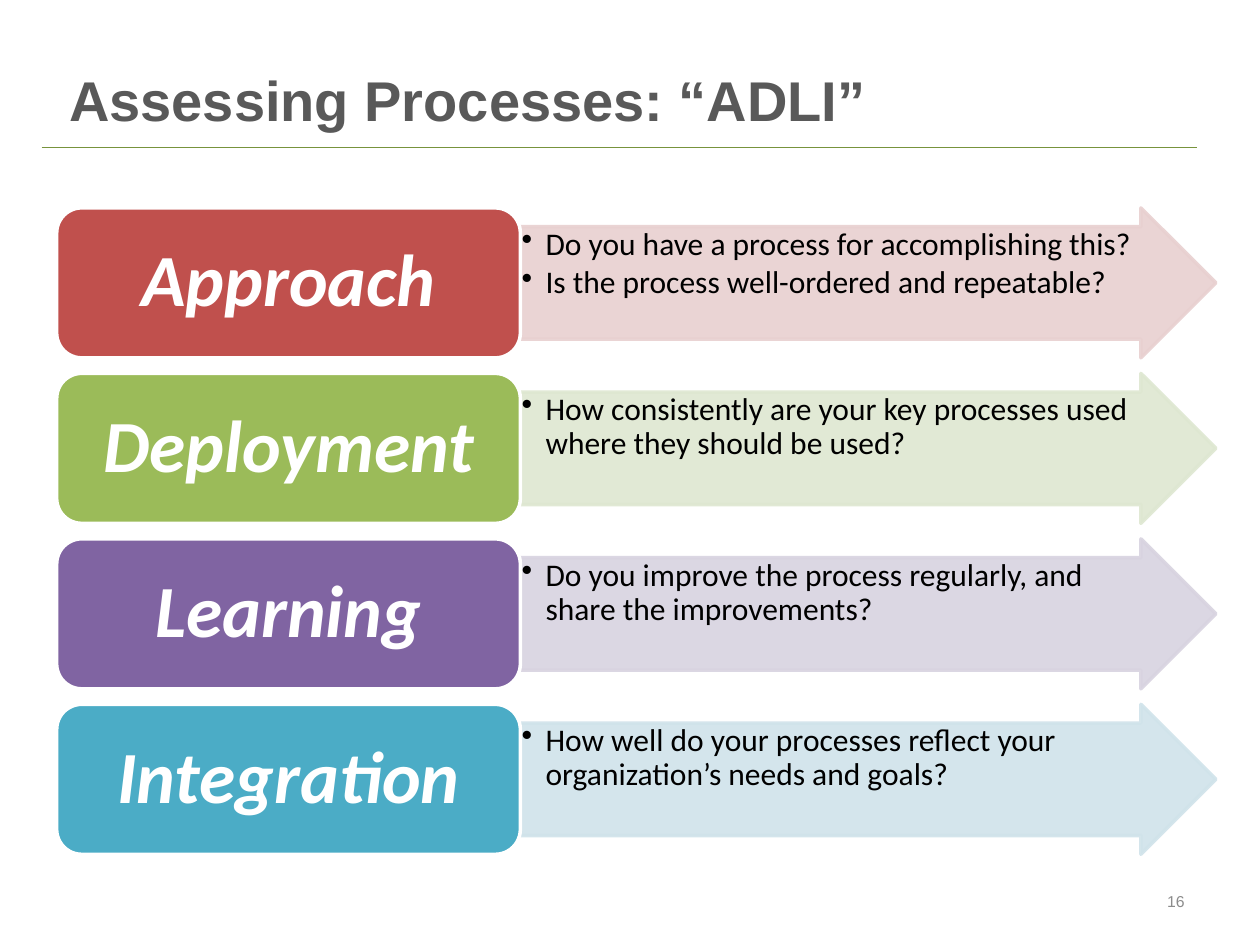
import collections

import pptx
import pptx.dml.color
import pptx.enum.shapes
import pptx.enum.text
import pptx.oxml
import pptx.oxml.ns
import pptx.util

SHAPE = pptx.enum.shapes.MSO_SHAPE
ALIGN = pptx.enum.text.PP_ALIGN
ANCHOR = pptx.enum.text.MSO_ANCHOR
Pt = pptx.util.Pt
Box = collections.namedtuple("Box", "left top width height")

COLUMNS, ROWS = 100, 75
DECK_WIDTH, DECK_HEIGHT = pptx.util.Inches(10), pptx.util.Inches(7.5)
WHITE = "FFFFFF"
LABEL_SHARE = 0.4
ROW_HEIGHT = 11.9

TITLE_FONT = {"name": "Arial", "size": Pt(32), "bold": True}
NUMBER_FONT = {"name": "Arial", "size": Pt(9)}
LABEL_FONT = {"name": "Calibri", "size": Pt(42), "bold": True, "italic": True}
BULLET_FONT = {"name": "Calibri", "size": Pt(18)}

STEPS = [
    ("Approach", "C0504D", "E8D0D0",
     ["Do you have a process for accomplishing this?",
      "Is the process well-ordered and repeatable?"]),
    ("Deployment", "9BBB59", "DEE7D1",
     ["How consistently are your key processes used where they should be used?"]),
    ("Learning", "8064A2", "D8D3E0",
     ["Do you improve the process regularly, and share the improvements?"]),
    ("Integration", "4BACC6", "D0E3EA",
     ["How well do your processes reflect your organization’s needs and goals?"]),
]


def rgb(value):
    """Return the colour for a hex string."""
    return pptx.dml.color.RGBColor.from_string(value)


def assign(target, values):
    """Set each attribute in values on the target."""
    for name, value in values.items():
        setattr(target, name, value)


def place(box):
    """Turn a box in grid units into slide lengths."""
    across, down = DECK_WIDTH / COLUMNS, DECK_HEIGHT / ROWS
    return [round(length * unit) for length, unit in zip(box, (across, down) * 2)]


def write(frame, lines, font, color, layout, paragraph, bullet=False):
    """Fill a text frame with one paragraph for each line."""
    assign(frame, {"word_wrap": True, **layout})
    for index, line in enumerate(lines):
        para = frame.add_paragraph() if index else frame.paragraphs[0]
        assign(para, paragraph)
        if bullet:
            properties = para._p.get_or_add_pPr()
            indent = pptx.util.Inches(0.19)
            properties.set("marL", str(indent))
            properties.set("indent", str(-indent))
            mark = pptx.oxml.parse_xml(
                f'<a:buChar {pptx.oxml.ns.nsdecls("a")} char="•"/>')
            properties.append(mark)
        span = para.add_run()
        span.text = line
        assign(span.font, font)
        span.font.color.rgb = rgb(color)


def add_block(page, kind, box, fill, line, alpha=100):
    """Add a preset shape with a solid fill and a two point outline."""
    block = page.shapes.add_shape(kind, *place(box))
    block.shadow.inherit = False
    block.fill.solid()
    block.fill.fore_color.rgb = rgb(fill)
    block.line.width = Pt(2)
    block.line.color.rgb = rgb(line)
    if alpha < 100:
        for color in block._element.spPr.iter(pptx.oxml.ns.qn("a:srgbClr")):
            color.append(pptx.oxml.parse_xml(
                f'<a:alpha {pptx.oxml.ns.nsdecls("a")} val="{alpha * 1000}"/>'))
    return block


def add_text(page, box, text, font, color, anchor, align):
    """Add a text box holding a single line."""
    frame = page.shapes.add_textbox(*place(box)).text_frame
    write(frame, [text], font, color, {"vertical_anchor": anchor}, {"alignment": align})


def add_header(page, box):
    """Add the title and the rule below it."""
    left, top, width, height = place(box)
    rule = page.shapes.add_connector(
        pptx.enum.shapes.MSO_CONNECTOR.STRAIGHT,
        left, top + height, left + width, top + height)
    rule.line.color.rgb = rgb("77933C")
    rule.line.width = Pt(0.75)
    rule._element.spPr.append(
        pptx.oxml.parse_xml(f'<a:effectLst {pptx.oxml.ns.nsdecls("a")}/>'))
    title = Box(box.left + 1.2, box.top, box.width - 2.3, box.height - 0.7)
    add_text(page, title, "Assessing Processes: “ADLI”", TITLE_FONT, "595959",
             ANCHOR.BOTTOM, ALIGN.LEFT)


def add_step(page, box, name, strong, pale, questions):
    """Add one row: an arrow with questions and its label."""
    split = box.width * LABEL_SHARE
    arrow = add_block(
        page, SHAPE.RIGHT_ARROW,
        box._replace(left=box.left + split, width=box.width - split), pale, pale, 90)
    arrow.adjustments[0], arrow.adjustments[1] = 0.75, 0.5
    margins = dict.fromkeys(
        ["margin_left", "margin_top", "margin_right", "margin_bottom"],
        pptx.util.Inches(0.01))
    write(arrow.text_frame, questions, BULLET_FONT, "000000",
          {"vertical_anchor": ANCHOR.TOP, **margins},
          {"alignment": ALIGN.LEFT, "line_spacing": 0.9, "space_after": Pt(2.7)},
          bullet=True)
    label = add_block(page, SHAPE.ROUNDED_RECTANGLE, box._replace(width=split),
                      strong, WHITE)
    write(label.text_frame, [name], LABEL_FONT, WHITE,
          {"vertical_anchor": ANCHOR.MIDDLE},
          {"alignment": ALIGN.CENTER, "line_spacing": 0.9})


def add_steps(page, box):
    """Spread the rows evenly over the box."""
    pitch = (box.height - ROW_HEIGHT) / (len(STEPS) - 1)
    for index, step in enumerate(STEPS):
        row = box._replace(top=box.top + index * pitch, height=ROW_HEIGHT)
        add_step(page, row, *step)


def main():
    """Build and save the deck."""
    deck = pptx.Presentation()
    assign(deck, {"slide_width": DECK_WIDTH, "slide_height": DECK_HEIGHT})
    page = deck.slides.add_slide(deck.slide_layouts[6])
    add_header(page, Box(3.3, 2.7, 91.7, 9))
    add_steps(page, Box(4.5, 16.5, 92, 51.3))
    add_text(page, Box(71.7, 69.5, 23.3, 4), "16", NUMBER_FONT, "8C8C8C",
             ANCHOR.MIDDLE, ALIGN.RIGHT)
    deck.save("out.pptx")


if __name__ == "__main__":
    main()
